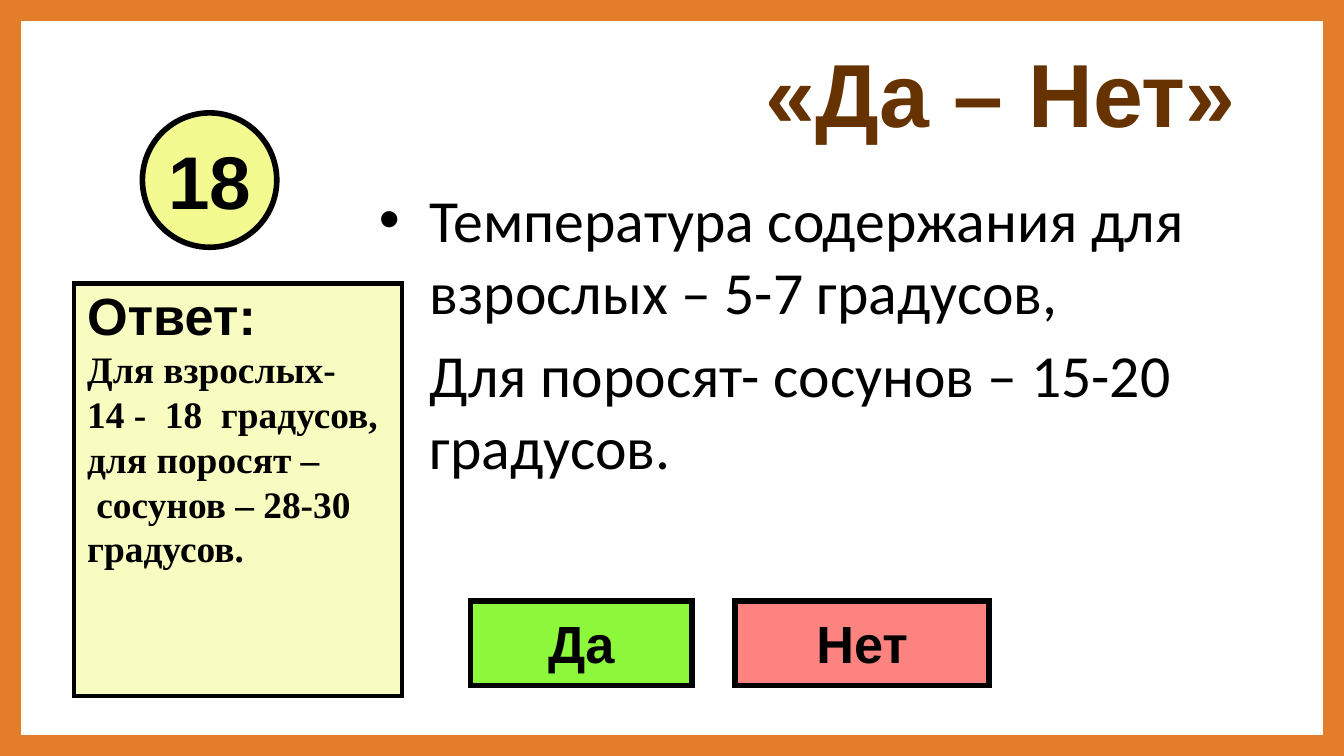
from lxml import etree
from pptx import Presentation
from pptx.dml.color import RGBColor
from pptx.enum import shapes, text
from pptx.oxml import ns
from pptx.util import Inches, Pt

COLORS = {
    "frame": "E37D29", "title": "663300", "ink": "000000",
    "number": "F2FA90", "answer": "F8FCC0", "yes": "8CF73B", "no": "FC8380",
}
SHAPE = shapes.MSO_SHAPE
ALIGN = text.PP_ALIGN
ANCHOR = text.MSO_ANCHOR
WIDTH = 10
HEIGHT = WIDTH * 9 / 16


class QuizSlide:
    def __init__(self, prs):
        self.slide = prs.slides.add_slide(prs.slide_layouts[5])

    @staticmethod
    def color(name):
        return RGBColor.from_string(COLORS[name])

    def style(self, p, size, font="Arial", color="ink", bold=True, align=ALIGN.LEFT):
        p.alignment = align
        for r in p.runs:
            r.font.name = font
            r.font.size = Pt(size)
            r.font.bold = bold
            r.font.color.rgb = self.color(color)

    def title(self, words, box):
        sp = self.slide.shapes.title
        sp.left, sp.top, sp.width, sp.height = map(Inches, box)
        tf = sp.text_frame
        tf.text = words
        tf.vertical_anchor = ANCHOR.MIDDLE
        self.style(tf.paragraphs[0], 48, color="title", align=ALIGN.CENTER)

    def shape(self, kind, box, fill, line="ink", weight=3):
        """Filled shape with a sharp-cornered outline."""
        sp = self.slide.shapes.add_shape(kind, *map(Inches, box))
        sp.shadow.inherit = False
        sp.fill.solid()
        sp.fill.fore_color.rgb = self.color(fill)
        sp.line.color.rgb = self.color(line)
        sp.line.width = Pt(weight)
        ln = sp._element.spPr.find(ns.qn("a:ln"))
        etree.SubElement(ln, ns.qn("a:miter"), lim="800000")
        return sp

    def frame(self):
        sp = self.shape(SHAPE.FRAME, (0, 0, WIDTH, HEIGHT), "frame", "frame", 2)
        sp.adjustments[0] = 0.025

    def label(self, kind, words, box, fill, size=28):
        """Outlined shape with a centred caption."""
        tf = self.shape(kind, box, fill).text_frame
        tf.word_wrap = False
        tf.vertical_anchor = ANCHOR.MIDDLE
        tf.text = words
        self.style(tf.paragraphs[0], size, align=ALIGN.CENTER)

    def answer(self, heading, lines, box):
        tf = self.shape(SHAPE.RECTANGLE, box, "answer", weight=2.25).text_frame
        tf.word_wrap = False
        tf.vertical_anchor = ANCHOR.TOP
        tf.margin_top = 0
        tf.text = heading
        self.style(tf.paragraphs[0], 28)
        for line in lines:
            p = tf.add_paragraph()
            p.text = line
            self.style(p, 20, "Times New Roman")

    def statement(self, paragraphs, box):
        """Body text with a bullet on its first paragraph only."""
        tf = self.slide.shapes.add_textbox(*map(Inches, box)).text_frame
        tf.word_wrap = True
        for i, words in enumerate(paragraphs):
            p = tf.add_paragraph() if i else tf.paragraphs[0]
            p.text = words
            pPr = p._p.get_or_add_pPr()
            pPr.set("marL", str(Inches(0.38)))
            pPr.set("indent", str(0 if i else -Inches(0.38)))
            if i:
                p.space_before = Pt(6.4)
            else:
                etree.SubElement(pPr, ns.qn("a:buFont"), typeface="Arial")
                etree.SubElement(pPr, ns.qn("a:buChar"), char="•")
            self.style(p, 32, "Calibri", bold=False)


def main():
    prs = Presentation()
    prs.slide_width, prs.slide_height = Inches(WIDTH), Inches(HEIGHT)
    s = QuizSlide(prs)
    s.frame()
    s.title("«Да – Нет»", (5.39, 0.21, 4.11, 0.94))
    s.statement(
        ["Температура содержания для взрослых – 5-7 градусов,",
         "Для поросят- сосунов – 15-20 градусов."],
        (2.72, 1.31, 6.78, 3.71))
    s.label(SHAPE.OVAL, "18", (1.06, 0.84, 1, 1), "number", 40)
    s.label(SHAPE.RECTANGLE, "Да", (3.5, 4.47, 1.65, 0.63), "yes")
    s.label(SHAPE.RECTANGLE, "Нет", (5.47, 4.47, 1.89, 0.63), "no")
    s.answer(
        "Ответ:",
        ["Для взрослых-", "14 -  18  градусов,", "для поросят –",
         " сосунов – 28-30", "градусов."],
        (0.55, 2.11, 2.44, 3.07))
    prs.save("out.pptx")


if __name__ == "__main__":
    main()
